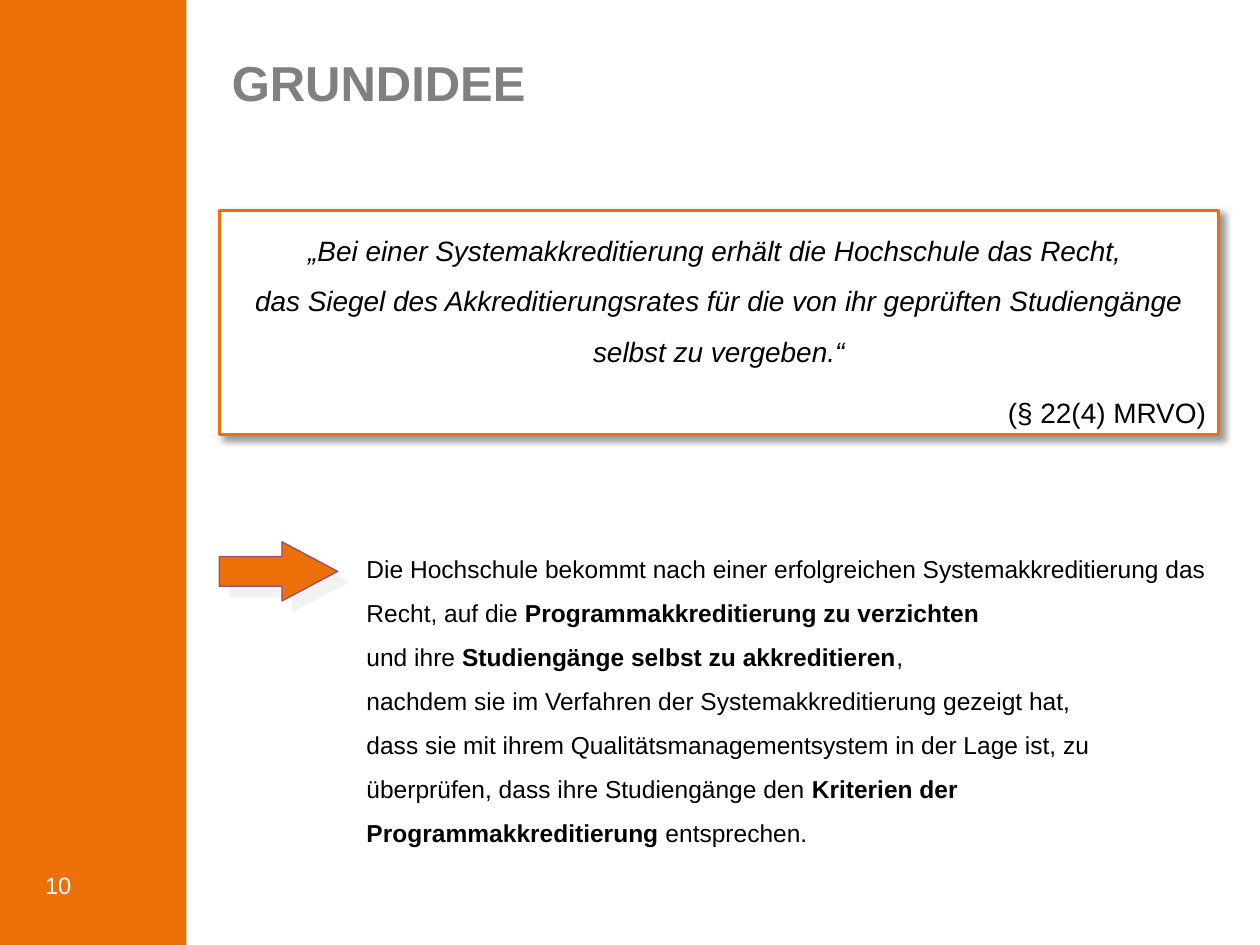
from lxml import etree
from pptx import Presentation
from pptx.dml.color import RGBColor
from pptx.enum.shapes import MSO_SHAPE
from pptx.enum.text import MSO_ANCHOR, MSO_AUTO_SIZE, PP_ALIGN
from pptx.oxml.ns import qn
from pptx.util import Inches, Pt

RECT, ARROW = MSO_SHAPE.RECTANGLE, MSO_SHAPE.RIGHT_ARROW
LEFT, CENTER, RIGHT = PP_ALIGN.LEFT, PP_ALIGN.CENTER, PP_ALIGN.RIGHT
TOP, BOTTOM = MSO_ANCHOR.TOP, MSO_ANCHOR.BOTTOM
ORANGE, WHITE, BLACK, GRAY = "EC7007", "FFFFFF", "000000", "808080"


def rgb(value):
    return RGBColor.from_string(value)


class SlideBuilder:
    """Holds the text style and the current slide, and adds elements to it."""

    def __init__(self, slide, font="Arial"):
        self.slide = slide
        self.font = font

    def frame(self, sp, anchor=TOP):
        tf = sp.text_frame
        tf.word_wrap = True
        tf.auto_size = MSO_AUTO_SIZE.NONE
        tf.vertical_anchor = anchor
        return tf

    def style(self, p, size, color, align=LEFT, spacing=1.0):
        p.alignment = align
        p.line_spacing = spacing
        for r in p.runs:
            r.font.name = self.font
            r.font.size = Pt(size)
            r.font.color.rgb = rgb(color)

    def place(self, sp, x, y, w, h):
        sp.left, sp.top, sp.width, sp.height = map(Inches, (x, y, w, h))

    def title(self, text, box):
        sp = self.slide.shapes.title
        self.place(sp, *box)
        tf = self.frame(sp)
        tf.text = text
        p = tf.paragraphs[0]
        self.style(p, 28, GRAY, spacing=0.9)
        p.runs[0].font.bold = True

    def text(self, box, size, color, anchor=TOP):
        sp = self.slide.shapes.add_textbox(*map(Inches, box))
        tf = self.frame(sp, anchor)
        return tf, size, color

    def label(self, text, box, size, color, anchor=TOP):
        sp = self.slide.shapes.add_textbox(*map(Inches, box))
        tf = self.frame(sp, anchor)
        tf.text = text
        self.style(tf.paragraphs[0], size, color)

    def rich_text(self, parts, box, size, color, indent):
        sp = self.slide.shapes.add_textbox(*map(Inches, box))
        p = self.frame(sp).paragraphs[0]
        for text, bold in parts:
            for i, line in enumerate(text.split("\n")):
                if i:
                    p.add_line_break()
                if line:
                    r = p.add_run()
                    r.text = line
                    r.font.bold = bold
        self.style(p, size, color, spacing=1.5)
        p._p.get_or_add_pPr().set("marL", str(Inches(indent)))

    def shape(self, kind, box, fill, line=None, width=0):
        sp = self.slide.shapes.add_shape(kind, *map(Inches, box))
        sp.shadow.inherit = False
        sp.fill.solid()
        sp.fill.fore_color.rgb = rgb(fill)
        if line:
            sp.line.color.rgb = rgb(line)
            sp.line.width = Pt(width)
        else:
            sp.line.fill.background()
        return sp

    def shadow(self, sp, color, alpha, blur, distance):
        effects = sp._element.spPr.find(qn("a:effectLst"))
        outer = etree.SubElement(
            effects, qn("a:outerShdw"), blurRad=str(Pt(blur)), dist=str(Pt(distance)),
            dir=str(45 * 60000), algn="tl", rotWithShape="0")
        clr = etree.SubElement(outer, qn("a:srgbClr"), val=color)
        etree.SubElement(clr, qn("a:alpha"), val=str(alpha * 1000))

    def quote(self, sp, text, source):
        tf = self.frame(sp)
        tf.text = text
        first, last = tf.paragraphs[0], tf.add_paragraph()
        last.text = source
        for p, align, italic in ((first, CENTER, True), (last, RIGHT, False)):
            self.style(p, 16, BLACK, align, 1.5)
            for r in p.runs:
                r.font.italic = italic
        first.space_after = last.space_before = Pt(3.2)


def main():
    prs = Presentation()
    prs.slide_width, prs.slide_height = Inches(10), Inches(7.5)
    s = SlideBuilder(prs.slides.add_slide(prs.slide_layouts[5]))

    s.shape(RECT, (0, 0, 1.48, 7.5), ORANGE)
    s.label("10", (0.26, 6.65, 0.92, 0.54), 13.5, WHITE, BOTTOM)
    s.title("GRUNDIDEE", (1.74, 0.42, 7.68, 0.47))

    box = s.shape(RECT, (1.74, 1.67, 7.93, 1.78), WHITE, ORANGE, 1.5)
    s.shadow(box, BLACK, 40, 4, 3)
    s.quote(
        box,
        "„Bei einer Systemakkreditierung erhält die Hochschule das Recht, \v"
        "das Siegel des Akkreditierungsrates für die von ihr geprüften "
        "Studiengänge selbst zu vergeben.“",
        "(§ 22(4) MRVO)")

    s.rich_text([
        ("Die Hochschule bekommt nach einer erfolgreichen Systemakkreditierung "
         "das Recht, auf die ", False),
        ("Programmakkreditierung zu verzichten \n", True),
        ("und ihre ", False),
        ("Studiengänge selbst zu akkreditieren", True),
        (", \nnachdem sie im Verfahren der Systemakkreditierung gezeigt hat, \n"
         "dass sie mit ihrem Qualitätsmanagementsystem in der Lage ist, zu "
         "überprüfen, dass ihre Studiengänge den ", False),
        ("Kriterien der Programmakkreditierung", True),
        (" entsprechen.", False),
    ], (2.72, 4.23, 7.08, 2.53), 14, BLACK, 0.09)

    arrow = s.shape(ARROW, (1.74, 4.3, 0.94, 0.47), ORANGE, "954F72", 0.75)
    arrow.adjustments[0], arrow.adjustments[1] = 0.5, 0.94
    s.shadow(arrow, "E7E6E6", 50, 0, 8.5)

    prs.save("out.pptx")


if __name__ == "__main__":
    main()
